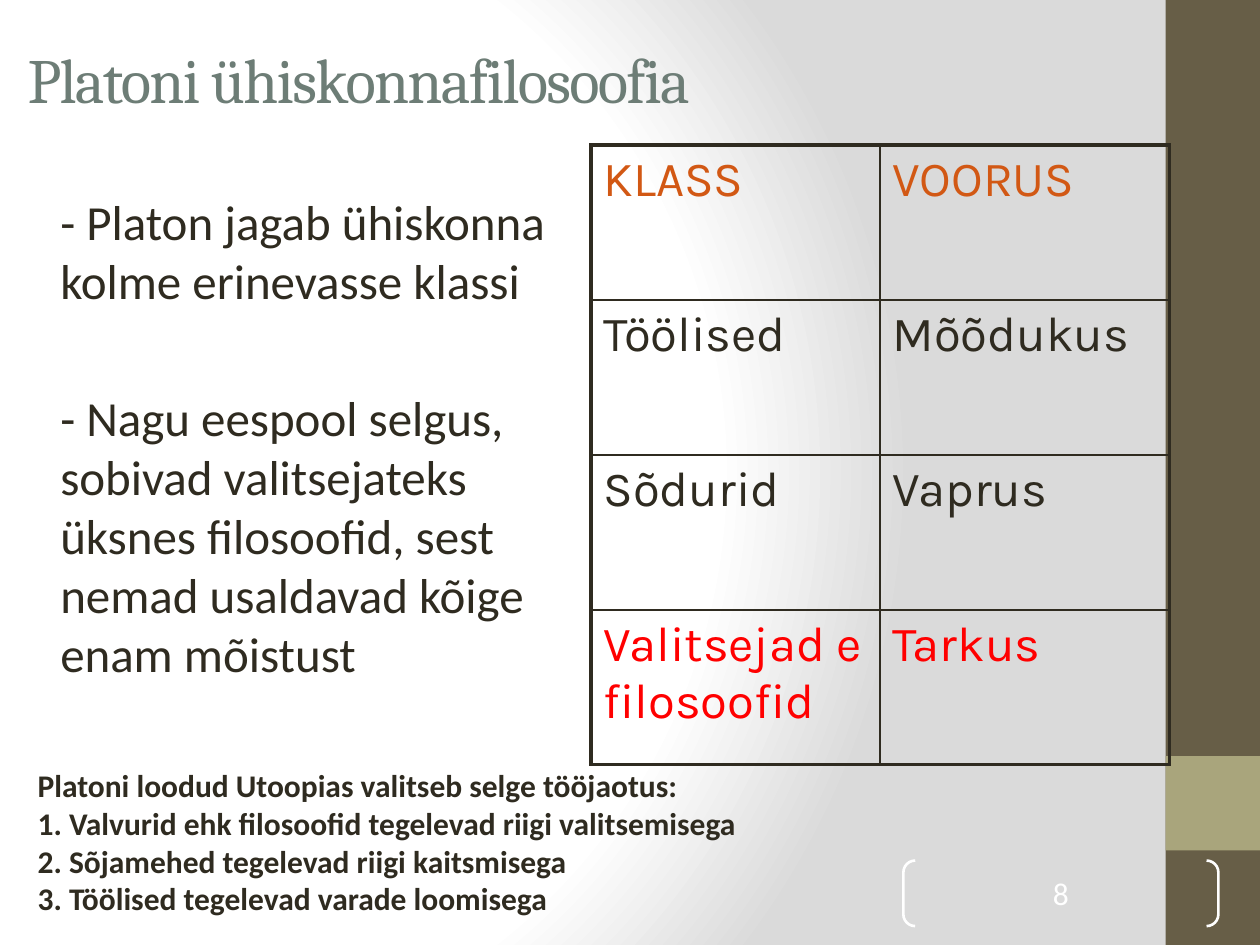
from lxml import etree
from pptx import Presentation
from pptx.dml.color import RGBColor
from pptx.enum.shapes import MSO_SHAPE
from pptx.enum.text import MSO_ANCHOR, MSO_AUTO_SIZE, PP_ALIGN
from pptx.oxml import parse_xml
from pptx.util import Inches, Pt

RECTANGLE, BRACKETS = MSO_SHAPE.RECTANGLE, MSO_SHAPE.DOUBLE_BRACKET
MIDDLE, TOP = MSO_ANCHOR.MIDDLE, MSO_ANCHOR.TOP
LEFT, CENTER = PP_ALIGN.LEFT, PP_ALIGN.CENTER
NO_AUTOFIT = MSO_AUTO_SIZE.NONE
DRAWING = "http://schemas.openxmlformats.org/drawingml/2006/main"

THEME = {
    "title_font": "Cambria", "body_font": "Calibri", "table_font": "Karla",
    "title_size": 36, "body_size": 28, "note_size": 18,
    "text": "2F2B20", "title": "6D7D76", "header": "D25814", "accent": "FF0000",
    "sidebar": "675E47", "block": "A9A57C", "white": "FFFFFF", "shade": "DADADA",
    "thick": 2.25, "thin": 1,
}

TITLE = "Platoni ühiskonnafilosoofia"
POINTS = [
    "- Platon jagab ühiskonna kolme erinevasse klassi",
    "- Nagu eespool selgus, sobivad valitsejateks üksnes filosoofid, "
    "sest nemad usaldavad kõige enam mõistust",
]
CLASSES = [
    ("header", ("KLASS", "VOORUS")),
    ("text", ("Töölised", "Mõõdukus")),
    ("text", ("Sõdurid", "Vaprus")),
    ("accent", ("Valitsejad e filosoofid", "Tarkus")),
]
DIVISION = [
    "Platoni loodud Utoopias valitseb selge tööjaotus:",
    "1. Valvurid ehk filosoofid tegelevad riigi valitsemisega",
    "2. Sõjamehed tegelevad riigi kaitsmisega",
    "3. Töölised tegelevad varade loomisega",
]
PAGE_NUMBER = "8"


def box(left, top, width, height):
    return [Inches(value) for value in (left, top, width, height)]


def color(name):
    return RGBColor.from_string(THEME[name])


def write(frame, lines, size="body_size", font="body_font", ink="text",
          bold=False, align=LEFT, anchor=TOP, before=(0,)):
    """Fill a text frame; the last value of before repeats for later lines."""
    frame.vertical_anchor = anchor
    for index, line in enumerate(lines):
        paragraph = frame.paragraphs[0] if index == 0 else frame.add_paragraph()
        paragraph.alignment = align
        paragraph.space_before = Pt(before[min(index, len(before) - 1)])
        run = paragraph.add_run()
        run.text = line
        run.font.name = THEME[font]
        run.font.size = Pt(THEME[size])
        run.font.bold = bold
        run.font.color.rgb = color(ink)


def set_background(slide):
    """Radial gradient that is white on the left and grey on the right."""
    slide.background.fill.solid()
    solid = slide.background._cSld.bg.bgPr[0]
    stops = "".join(
        f'<a:gs pos="{position * 1000}"><a:srgbClr val="{THEME[name]}"/></a:gs>'
        for position, name in ((0, "white"), (75, "white"), (100, "shade")))
    gradient = parse_xml(
        f'<a:gradFill xmlns:a="{DRAWING}" rotWithShape="1"><a:gsLst>{stops}</a:gsLst>'
        '<a:path path="circle"><a:fillToRect l="20000" t="50000" r="100000" b="50000"/>'
        '</a:path></a:gradFill>')
    solid.getparent().replace(solid, gradient)


def add_block(slide, place, fill):
    shape = slide.shapes.add_shape(RECTANGLE, *place)
    shape.shadow.inherit = False
    shape.fill.solid()
    shape.fill.fore_color.rgb = color(fill)
    shape.line.fill.background()


def add_page_number(slide):
    shape = slide.shapes.add_shape(BRACKETS, *box(7.17, 6.83, 2.5, 0.52))
    shape.adjustments[0] = 0.18
    shape.shadow.inherit = False
    shape.fill.background()
    shape.line.color.rgb = color("white")
    shape.line.width = Pt(1.5)
    frame = shape.text_frame
    frame.margin_left = frame.margin_right = frame.margin_top = frame.margin_bottom = 0
    write(frame, [PAGE_NUMBER], size="note_size", ink="white", align=CENTER, anchor=MIDDLE)


def add_text(slide, place, lines, wrap=True, indent=0, **style):
    frame = slide.shapes.add_textbox(*place).text_frame
    frame.word_wrap = wrap
    write(frame, lines, **style)
    for paragraph in frame.paragraphs:
        paragraph._p.get_or_add_pPr().set("marL", str(Inches(indent)))


def set_borders(cell, outer_sides):
    properties = cell._tc.get_or_add_tcPr()
    for index, side in enumerate("LRTB"):
        width = THEME["thick" if side in outer_sides else "thin"]
        line = etree.Element(f"{{{DRAWING}}}ln{side}", w=str(Pt(width)))
        fill = etree.SubElement(line, f"{{{DRAWING}}}solidFill")
        etree.SubElement(fill, f"{{{DRAWING}}}srgbClr", val=THEME["text"])
        properties.insert(index, line)


def add_class_table(slide):
    row_count, column_count = len(CLASSES), len(CLASSES[0][1])
    table = slide.shapes.add_table(
        row_count, column_count, *box(4.69, 1.15, 4.59, 4.92)).table
    table.first_row = table.horz_banding = False
    for row, (ink, words) in enumerate(CLASSES):
        for column, word in enumerate(words):
            cell = table.cell(row, column)
            cell.fill.background()
            write(cell.text_frame, [word], font="table_font", ink=ink, before=(5.6,))
            edges = {"L": column == 0, "R": column == column_count - 1,
                     "T": row == 0, "B": row == row_count - 1}
            set_borders(cell, [side for side, outer in edges.items() if outer])


def main():
    presentation = Presentation()
    presentation.slide_width, presentation.slide_height = Inches(10), Inches(7.5)
    slide = presentation.slides.add_slide(presentation.slide_layouts[5])
    set_background(slide)

    title = slide.shapes.title
    title.left, title.top, title.width, title.height = box(0.12, 0, 9.34, 1.25)
    title.text_frame.auto_size = NO_AUTOFIT
    write(title.text_frame, [TITLE], size="title_size", font="title_font",
          ink="title", anchor=MIDDLE)
    title.text_frame.paragraphs[0].runs[0].font._element.set("spc", "-100")

    add_block(slide, box(9.25, 0, 0.75, 7.5), "sidebar")
    add_block(slide, box(9.25, 6, 0.75, 0.75), "block")
    add_page_number(slide)
    add_text(slide, box(0, 1.47, 4.59, 4.92), POINTS, indent=0.38, before=(5.6, 45))
    add_class_table(slide)
    add_text(slide, box(0.2, 6.03, 5.79, 1.31), DIVISION, wrap=False,
             size="note_size", bold=True)
    presentation.save("out.pptx")


if __name__ == "__main__":
    main()
